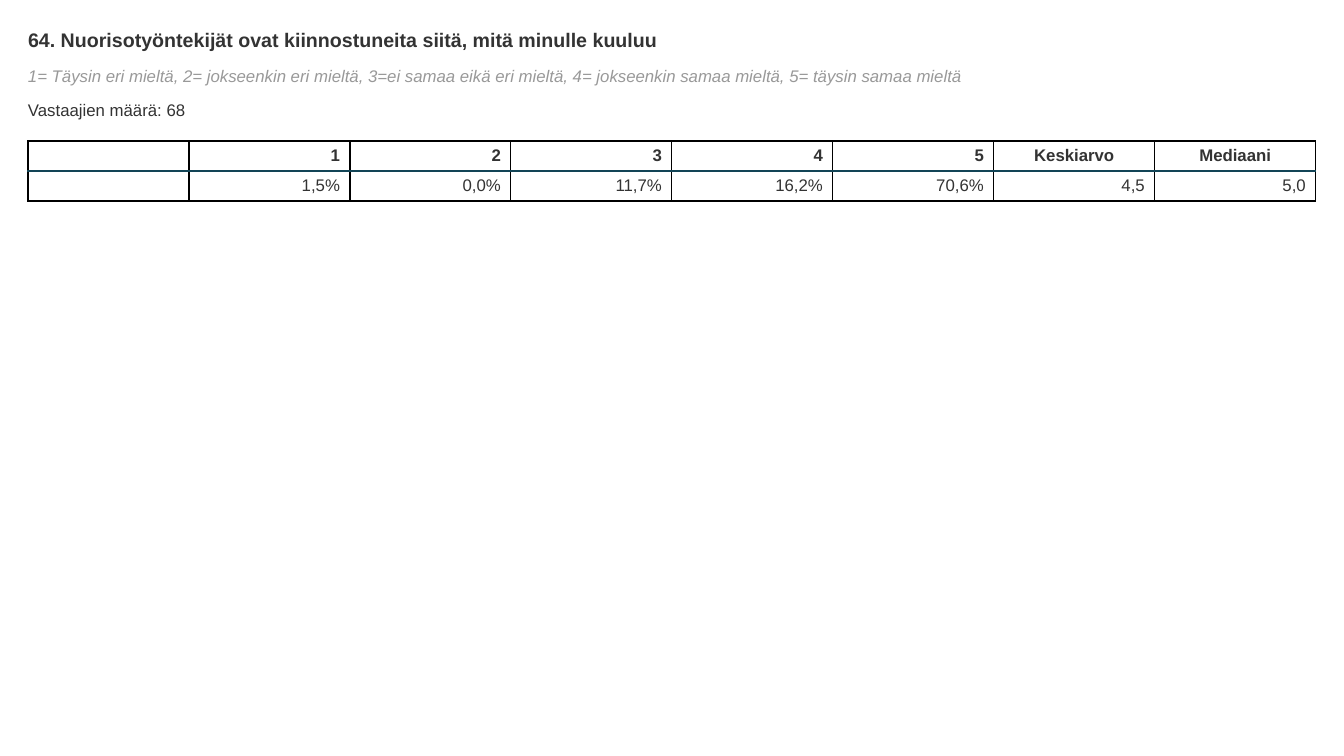
import pptx
import pptx.dml.color
import pptx.enum.text
import pptx.oxml
import pptx.oxml.ns
import pptx.util

DARK = pptx.dml.color.RGBColor(0x33, 0x33, 0x33)
GREY = pptx.dml.color.RGBColor(0x99, 0x99, 0x99)
BLACK = pptx.dml.color.RGBColor(0x00, 0x00, 0x00)
TEAL = pptx.dml.color.RGBColor(0x12, 0x44, 0x56)

LEFT = 28
COLUMN_WIDTH = 161
ROW_HEIGHT = 30
CELL_PADDING = 10
RIGHT = pptx.enum.text.PP_ALIGN.RIGHT
CENTER = pptx.enum.text.PP_ALIGN.CENTER

HEADERS = ["", "1", "2", "3", "4", "5", "Keskiarvo", "Mediaani"]
VALUES = ["", "1,5%", "0,0%", "11,7%", "16,2%", "70,6%", "4,5", "5,0"]
WIDTH = COLUMN_WIDTH * len(HEADERS)


def px(length):
    return pptx.util.Inches(length / 100.8)


class SurveySlide:
    font_name = "Arial"

    def __init__(self, presentation):
        self.slide = presentation.slides.add_slide(presentation.slide_layouts[5])

    def style(self, paragraph, size, color, bold=False, italic=False):
        font = paragraph.font
        font.name = self.font_name
        font.size = pptx.util.Pt(size)
        font.bold = bold
        font.italic = italic
        font.color.rgb = color

    def fill_text(self, shape, text, top, height, size, color, **emphasis):
        shape.left, shape.top = px(LEFT), px(top)
        shape.width, shape.height = px(WIDTH), px(height)
        frame = shape.text_frame
        frame.word_wrap = True
        frame.auto_size = pptx.enum.text.MSO_AUTO_SIZE.SHAPE_TO_FIT_TEXT
        frame.vertical_anchor = pptx.enum.text.MSO_ANCHOR.TOP
        frame.margin_left = frame.margin_top = 0
        frame.margin_right = frame.margin_bottom = 0
        frame.text = text
        paragraph = frame.paragraphs[0]
        paragraph.alignment = pptx.enum.text.PP_ALIGN.LEFT
        self.style(paragraph, size, color, **emphasis)

    def title(self, text, *placement, **emphasis):
        self.fill_text(self.slide.shapes.title, text, *placement, **emphasis)

    def text(self, text, *placement, **emphasis):
        shape = self.slide.shapes.add_textbox(0, 0, px(WIDTH), px(ROW_HEIGHT))
        self.fill_text(shape, text, *placement, **emphasis)

    def border(self, cell, side, color, width):
        namespace = pptx.oxml.ns.nsdecls("a")
        line = pptx.oxml.parse_xml(
            f'<a:{side} {namespace} w="{pptx.util.Pt(width)}"><a:solidFill>'
            f'<a:srgbClr val="{color}"/></a:solidFill></a:{side}>'
        )
        cell._tc.get_or_add_tcPr().append(line)

    def table(self, rows, top):
        frame = self.slide.shapes.add_table(
            len(rows), len(HEADERS), px(LEFT), px(top), px(WIDTH), px(ROW_HEIGHT * len(rows))
        )
        table = frame.table
        for column in table.columns:
            column.width = px(COLUMN_WIDTH)
        for row_index, values in enumerate(rows):
            table.rows[row_index].height = px(ROW_HEIGHT)
            header = row_index == 0
            for column_index, value in enumerate(values):
                cell = table.cell(row_index, column_index)
                cell.margin_left = cell.margin_right = px(CELL_PADDING)
                cell.margin_top = cell.margin_bottom = 0
                cell.vertical_anchor = pptx.enum.text.MSO_ANCHOR.MIDDLE
                cell.text = value
                paragraph = cell.text_frame.paragraphs[0]
                paragraph.alignment = CENTER if header and value.isalpha() else RIGHT
                self.style(paragraph, 12, DARK, bold=header)
                divider = "lnB" if header else "lnT"
                for side in ("lnL", "lnR", "lnT", "lnB"):
                    if side == divider:
                        self.border(cell, side, TEAL, 2)
                    else:
                        self.border(cell, side, BLACK, 1)
                cell.fill.background()


def main():
    presentation = pptx.Presentation()
    presentation.slide_width = px(1344)
    presentation.slide_height = px(756)
    survey = SurveySlide(presentation)
    survey.title(
        "64. Nuorisotyöntekijät ovat kiinnostuneita siitä, mitä minulle kuuluu",
        28, 23, 14, DARK, bold=True,
    )
    survey.text(
        "1= Täysin eri mieltä, 2= jokseenkin eri mieltä, 3=ei samaa eikä eri mieltä, "
        "4= jokseenkin samaa mieltä, 5= täysin samaa mieltä",
        66, 20, 12, GREY, italic=True,
    )
    survey.text("Vastaajien määrä: 68", 100, 20, 12, DARK)
    survey.table([HEADERS, VALUES], 141)
    presentation.save("out.pptx")


if __name__ == "__main__":
    main()
